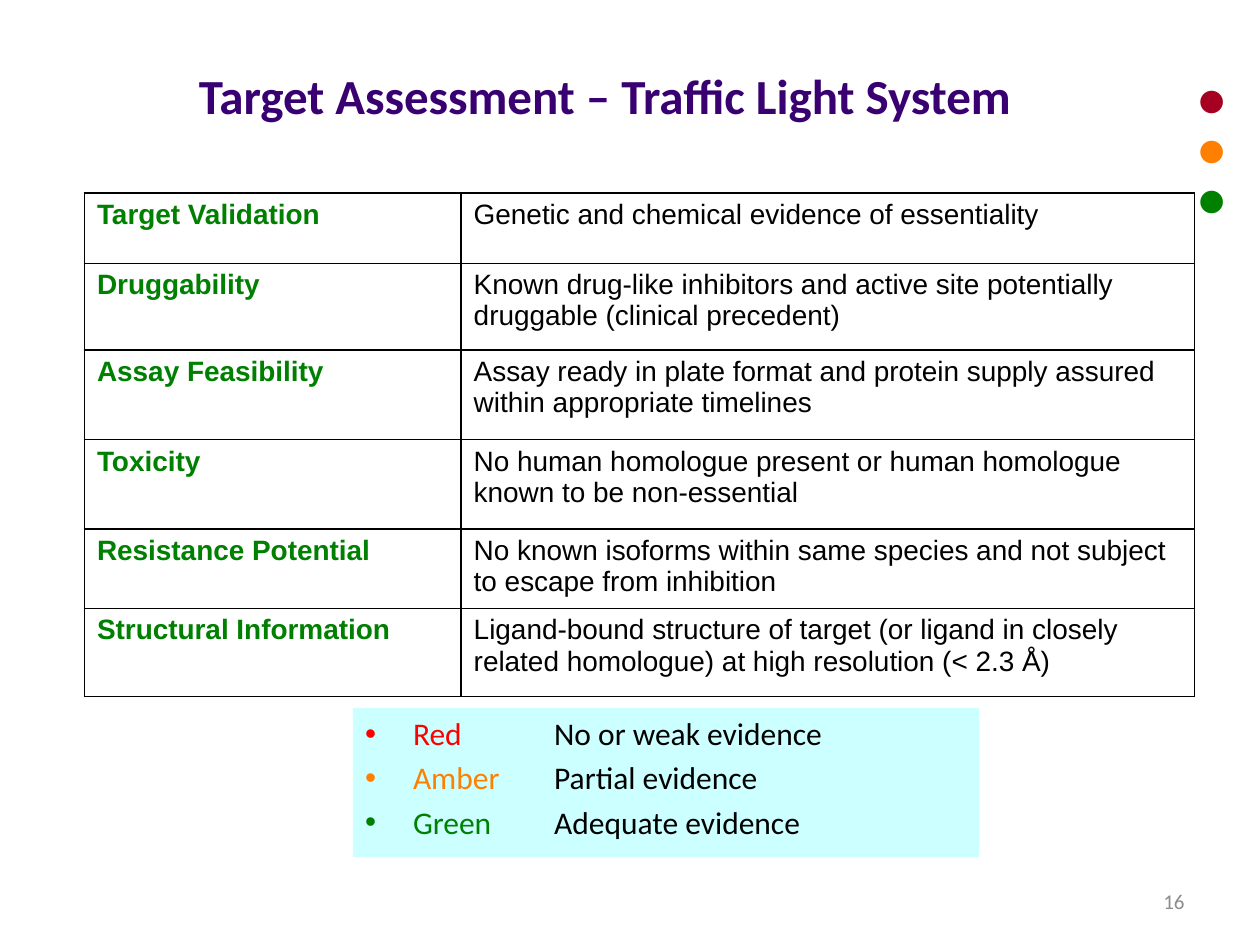
from lxml.etree import SubElement
from pptx import Presentation
from pptx.dml.color import RGBColor
from pptx.enum.shapes import MSO_SHAPE
from pptx.enum.text import MSO_ANCHOR, MSO_AUTO_SIZE, PP_ALIGN
from pptx.oxml.ns import qn
from pptx.util import Inches, Pt

RED, AMBER, GREEN, BLACK = "FF0000", "FF8000", "008000", "000000"

CRITERIA = [
    ("Target Validation", "Genetic and chemical evidence of essentiality", 0.56),
    ("Druggability", "Known drug-like inhibitors and active site potentially "
     "druggable (clinical precedent)", 0.69),
    ("Assay Feasibility", "Assay ready in plate format and protein supply assured "
     "within appropriate timelines", 0.71),
    ("Toxicity", "No human homologue present or human homologue known to be "
     "non-essential", 0.71),
    ("Resistance Potential", "No known isoforms within same species and not subject "
     "to escape from inhibition", 0.63),
    ("Structural Information", "Ligand-bound structure of target (or ligand in closely "
     "related homologue) at high resolution (< 2.3 Å)", 0.7),
]
LEGEND = [
    ("Red \t\t", RED, "No or weak evidence"),
    ("Amber \t", AMBER, "Partial evidence"),
    ("Green \t", GREEN, "Adequate evidence"),
]


def rgb(value):
    return RGBColor.from_string(value)


class SlideBuilder:
    font = "Calibri"
    table_font = "Arial"

    def __init__(self, prs):
        self.s = prs.slides.add_slide(prs.slide_layouts[5])

    def style(self, p, size, color=None, bold=False, font=None):
        p.font.name = font or self.font
        p.font.size = Pt(size)
        p.font.bold = bold
        if color:
            p.font.color.rgb = rgb(color)

    def title(self, text, x, y, w, h):
        sp = self.s.shapes.title
        sp.left, sp.top, sp.width, sp.height = map(Inches, (x, y, w, h))
        tf = sp.text_frame
        tf.text = text
        tf.vertical_anchor = MSO_ANCHOR.MIDDLE
        tf.paragraphs[0].alignment = PP_ALIGN.CENTER
        self.style(tf.paragraphs[0], 28, "380070", bold=True)

    def text(self, text, x, y, w, h, size, color, align=PP_ALIGN.LEFT,
             anchor=MSO_ANCHOR.TOP, wrap=True):
        tf = self.s.shapes.add_textbox(*map(Inches, (x, y, w, h))).text_frame
        tf.word_wrap = wrap
        tf.auto_size = MSO_AUTO_SIZE.NONE if wrap else MSO_AUTO_SIZE.SHAPE_TO_FIT_TEXT
        tf.vertical_anchor = anchor
        p = tf.paragraphs[0]
        p.text = text
        p.alignment = align
        self.style(p, size, color)

    def cell(self, cell, text, color, bold):
        p = cell.text_frame.paragraphs[0]
        p.text = text
        self.style(p, 16, color, bold, self.table_font)
        tc_pr = cell._tc.get_or_add_tcPr()
        for side in ("a:lnL", "a:lnR", "a:lnT", "a:lnB"):
            ln = SubElement(tc_pr, qn(side), w=str(Pt(1)))
            fill = SubElement(ln, qn("a:solidFill"))
            SubElement(fill, qn("a:srgbClr"), val=BLACK)
        cell.fill.background()

    def table(self, rows, x, y, col_widths):
        height = sum(row[2] for row in rows)
        table = self.s.shapes.add_table(
            len(rows), len(col_widths),
            *map(Inches, (x, y, sum(col_widths), height))).table
        table.first_row = table.horz_banding = False
        for col, width in zip(table.columns, col_widths):
            col.width = Inches(width)
        for i, (name, evidence, row_height) in enumerate(rows):
            table.rows[i].height = Inches(row_height)
            self.cell(table.cell(i, 0), name, GREEN, True)
            self.cell(table.cell(i, 1), evidence, BLACK, False)

    def bullet(self, p, indent):
        p_pr = p._p.get_or_add_pPr()
        p_pr.set("marL", str(Inches(indent)))
        p_pr.set("indent", str(-Inches(indent)))
        SubElement(p_pr, qn("a:buFont"), typeface="Arial")
        SubElement(p_pr, qn("a:buChar"), char="•")

    def legend(self, entries, x, y, w, h):
        sp = self.s.shapes.add_shape(MSO_SHAPE.RECTANGLE, *map(Inches, (x, y, w, h)))
        sp.shadow.inherit = False
        sp.fill.solid()
        sp.fill.fore_color.rgb = rgb("CCFFFF")
        sp.line.fill.background()
        tf = sp.text_frame
        tf.word_wrap = True
        tf.vertical_anchor = MSO_ANCHOR.TOP
        for i, (label, color, meaning) in enumerate(entries):
            p = tf.add_paragraph() if i else tf.paragraphs[0]
            p.alignment = PP_ALIGN.LEFT
            p.space_before = Pt(3.6 if i else 0)
            self.bullet(p, 0.38)
            self.style(p, 18)
            for text, run_color in ((label, color), (meaning, BLACK)):
                r = p.add_run()
                r.text = text
                r.font.color.rgb = rgb(run_color)


def main():
    prs = Presentation()
    prs.slide_width, prs.slide_height = Inches(10), Inches(7.5)
    slide = SlideBuilder(prs)

    # Title and slide number
    slide.title("Target Assessment – Traffic Light System", 0.43, 0.13, 8.74, 1.25)
    slide.text("16", 7.17, 6.95, 2.33, 0.4, 12, "8C8C8C",
               PP_ALIGN.RIGHT, MSO_ANCHOR.MIDDLE)

    # Assessment criteria
    slide.table(CRITERIA, 0.67, 1.53, (2.99, 5.82))

    # Traffic light
    for i, color in enumerate(("A50021", AMBER, GREEN)):
        slide.text("●", 9.4, 0.49 + 0.395 * i, 0.59, 0.57, 28, color, wrap=False)

    # Legend
    slide.legend(LEGEND, 2.8, 5.62, 4.97, 1.18)

    prs.save("out.pptx")


if __name__ == "__main__":
    main()
